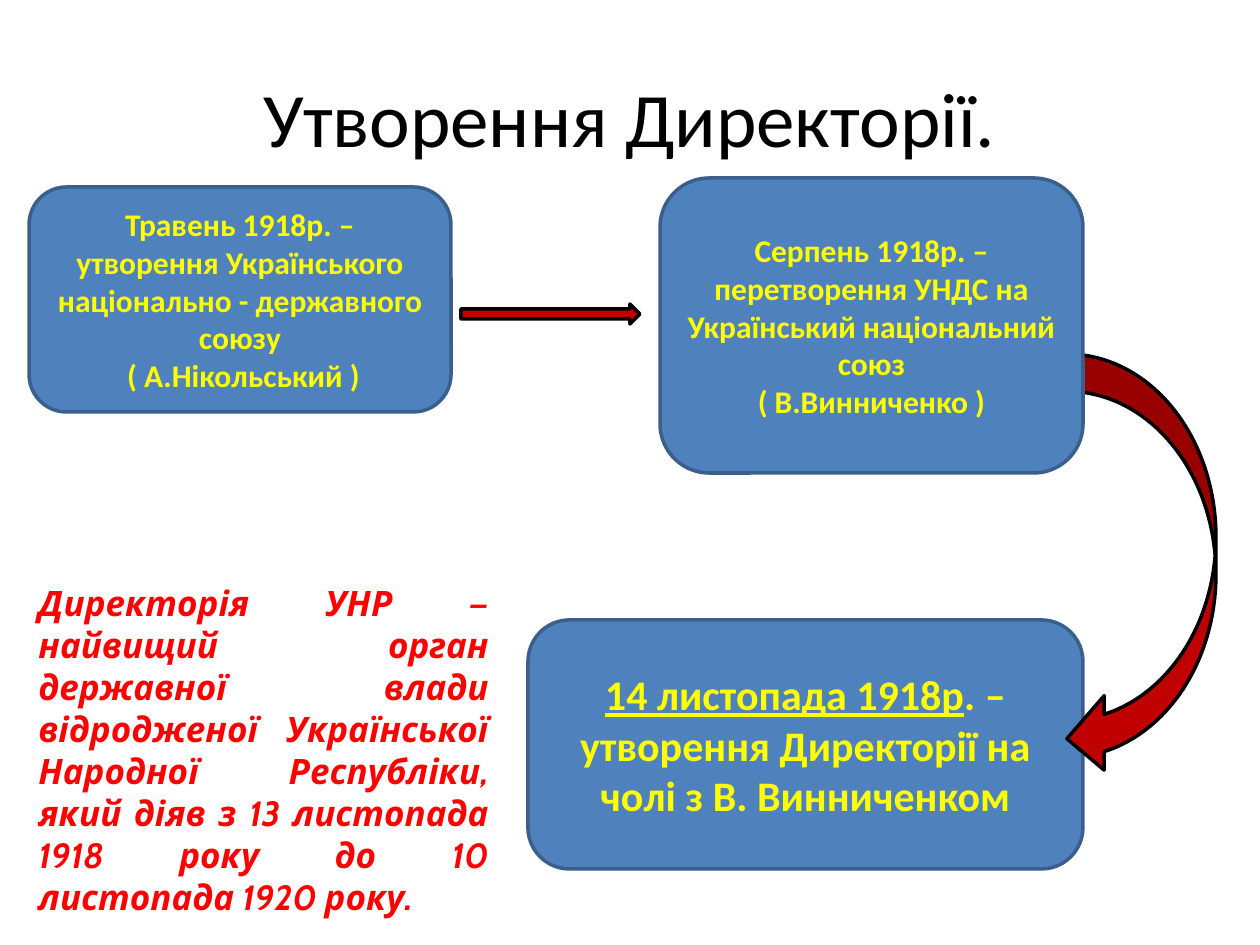
from pptx import Presentation
from pptx.dml.color import RGBColor
from pptx.enum.shapes import MSO_SHAPE as Shape
from pptx.enum.text import MSO_ANCHOR as Anchor, PP_ALIGN as Align
from pptx.util import Pt

PX = 914400 / 126
SHAPE_LINE = 2


def color(value):
    return RGBColor.from_string(value)


def write(shape, paragraphs, align, anchor, text_color, **font_format):
    """Fill a shape with paragraphs, each a list of (text, underline) runs."""
    frame = shape.text_frame
    frame.word_wrap = True
    frame.vertical_anchor = anchor
    for index, runs in enumerate(paragraphs):
        paragraph = frame.paragraphs[0] if index == 0 else frame.add_paragraph()
        paragraph.alignment = align
        for text, underline in runs:
            run = paragraph.add_run()
            run.text = text
            run.font.color.rgb = color(text_color)
            for name, value in {**font_format, "underline": underline}.items():
                setattr(run.font, name, value)


presentation = Presentation()
presentation.slide_width = round(1260 * PX)
presentation.slide_height = round(945 * PX)
slide = presentation.slides.add_slide(presentation.slide_layouts[6])

# Title and definition
texts = [
    ((63, 38, 1134, 157), "Утворення Директорії.", Align.CENTER, Anchor.MIDDLE, "000000",
     {"name": "Calibri", "size": Pt(44)}),
    ((26, 575, 475, 310),
     "Директорія УНР — найвищий орган державної влади відродженої Української "
     "Народної Республіки, який діяв з 13 листопада 1918 року до 10 листопада 1920 року.",
     Align.JUSTIFY, Anchor.TOP, "FF0000",
     {"name": "Cabin", "size": Pt(20), "bold": True, "italic": True}),
]
for box, text, align, anchor, text_color, font_format in texts:
    textbox = slide.shapes.add_textbox(*[round(length * PX) for length in box])
    write(textbox, [[(text, False)]], align, anchor, text_color, **font_format)

# Events and arrows, from back to front
BLUE, RED = ("4F81BD", "3A5F8C"), ("C00000", "000000")
events_and_arrows = [
    (Shape.ROUNDED_RECTANGLE, (29, 187, 422, 225), BLUE, 18, [
        [("Травень 1918р. – утворення Українського національно - державного союзу", False)],
        [(" ( А.Нікольський )", False)]]),
    (Shape.ROUNDED_RECTANGLE, (528, 620, 555, 249), BLUE, 24, [
        [("14 листопада 1918р", True),
         (". – утворення Директорії на чолі з В. Винниченком", False)]]),
    (Shape.RIGHT_ARROW, (461, 304, 179, 20), RED, None, []),
    (Shape.CURVED_LEFT_ARROW, (1067, 354, 149, 422), RED, None, []),
    (Shape.ROUNDED_RECTANGLE, (660, 178, 423, 295), BLUE, 18, [
        [("Серпень 1918р. – перетворення УНДС на Український національний союз", False)],
        [("( В.Винниченко )", False)]]),
]
for kind, box, (fill, line), size, paragraphs in events_and_arrows:
    shape = slide.shapes.add_shape(kind, *[round(length * PX) for length in box])
    shape.shadow.inherit = False
    shape.fill.solid()
    shape.fill.fore_color.rgb = color(fill)
    shape.line.color.rgb = color(line)
    shape.line.width = Pt(SHAPE_LINE)
    if paragraphs:
        write(shape, paragraphs, Align.CENTER, Anchor.MIDDLE, "FFFF00",
              name="Calibri", size=Pt(size), bold=True)

presentation.save("out.pptx")
